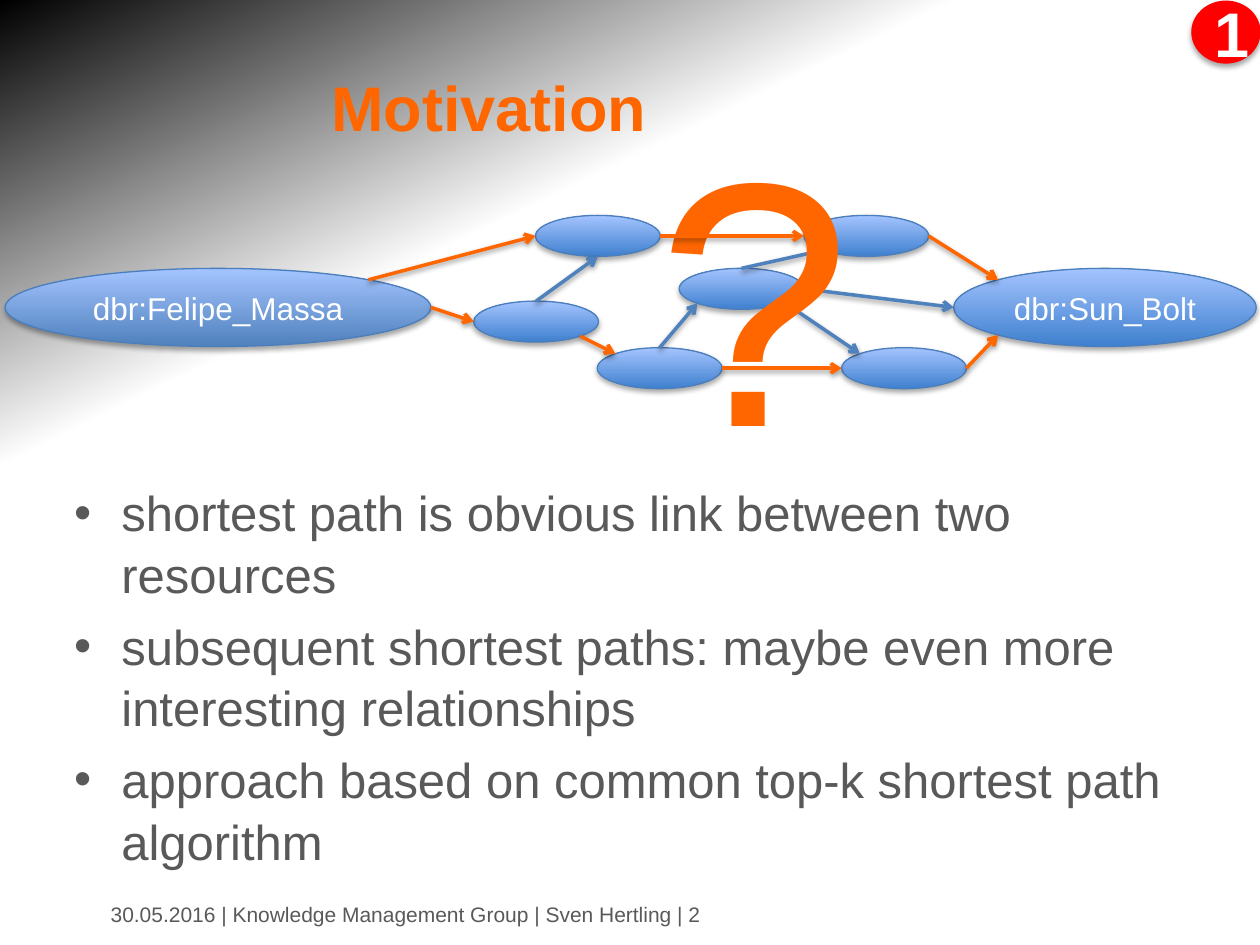
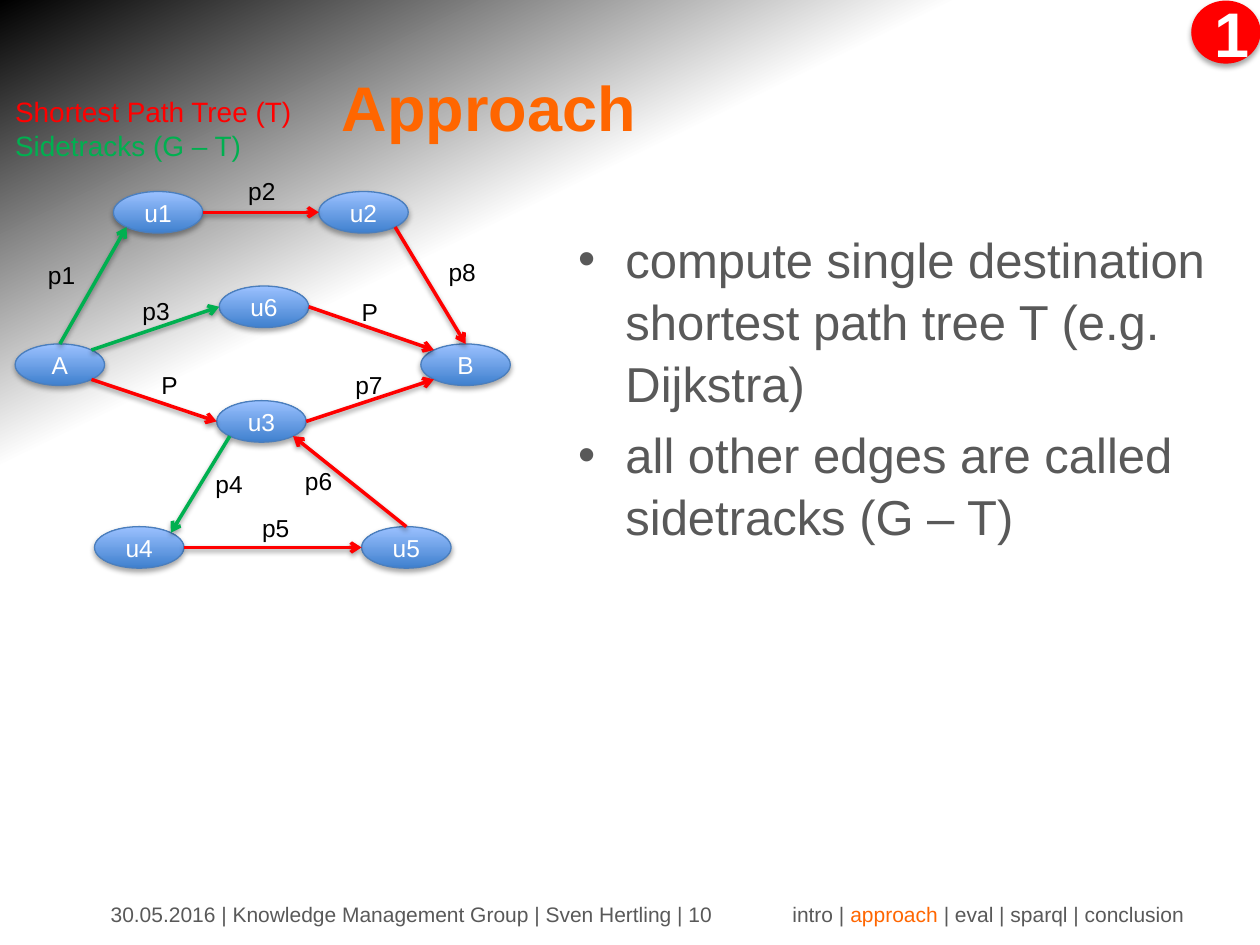
from math import cos, radians, sin

from lxml.etree import SubElement
from pptx import Presentation
from pptx.dml.color import RGBColor
from pptx.enum.shapes import MSO_CONNECTOR, MSO_SHAPE
from pptx.enum.text import MSO_ANCHOR, PP_ALIGN
from pptx.oxml.ns import qn
from pptx.util import Pt

# Colours
ORANGE = RGBColor(0xFF, 0x66, 0x00)
RED = RGBColor(0xFF, 0x00, 0x00)
GREEN = RGBColor(0x00, 0xB0, 0x50)
BLUE = RGBColor(0x4F, 0x81, 0xBD)
RIM = RGBColor(0x4B, 0x7E, 0xBC)
DEEP = RGBColor(0x3F, 0x80, 0xCE)
LIGHT = RGBColor(0xA4, 0xC4, 0xFF)
PALE = RGBColor(0x9B, 0xC1, 0xFF)
GREY = RGBColor(0x59, 0x59, 0x59)
BLACK = RGBColor(0x00, 0x00, 0x00)
WHITE = RGBColor(0xFF, 0xFF, 0xFF)

# Font formats
TITLE = dict(size=Pt(36), bold=True, rgb=ORANGE)
BADGE = dict(size=Pt(36), bold=True, rgb=WHITE)
BODY = dict(size=Pt(28), rgb=GREY)
FOOT = dict(size=Pt(12), rgb=GREY)
MARK = dict(size=Pt(199), rgb=ORANGE)
ENDS = dict(size=Pt(18), rgb=WHITE)
NODE = dict(size=Pt(14), rgb=WHITE)
LABEL = dict(size=Pt(14), rgb=BLACK)
KEY = dict(size=Pt(16), rgb=RED)

TIGHT = (10.08, 5.04, 10.08, 5.04)
SITES = ["n", "nw", "w", "sw", "s", "se", "e", "ne"]


def style(font, look):
    for key, val in {"name": "Arial", **look}.items():
        if key == "rgb":
            font.color.rgb = val
        else:
            setattr(font, key, val)


def write(frame, paras, look, align=PP_ALIGN.LEFT, **form):
    """Each paragraph is a list of (text, colour) runs; None keeps the colour."""
    for key, val in {"word_wrap": True, **form}.items():
        setattr(frame, key, val)
    for i, runs in enumerate(paras):
        para = frame.paragraphs[0] if i == 0 else frame.add_paragraph()
        para.alignment = align
        for text, rgb in runs:
            run = para.add_run()
            run.text = text
            style(run.font, {**look, "rgb": rgb or look["rgb"]})


def pad(frame, sides):
    for name, val in zip(("left", "top", "right", "bottom"), sides):
        setattr(frame, "margin_" + name, Pt(val))


def label(slide, box, paras, look, sides=(7.2, 3.6, 7.2, 3.6), **form):
    frame = slide.shapes.add_textbox(*map(Pt, box)).text_frame
    pad(frame, sides)
    write(frame, paras, look, **form)
    return frame


def grade(host, stops, angle):
    """Refill the gradient of host with (percent, colour, alpha) stops."""
    grad = next(host.iter(qn("a:gradFill")))
    for child in list(grad):
        grad.remove(child)
    rows = SubElement(grad, qn("a:gsLst"))
    for pos, rgb, alpha in stops:
        stop = SubElement(rows, qn("a:gs"), pos=str(pos * 1000))
        tone = SubElement(stop, qn("a:srgbClr"), val=str(rgb))
        if alpha < 100:
            SubElement(tone, qn("a:alpha"), val=str(alpha * 1000))
    SubElement(grad, qn("a:lin"), ang=str(angle * 60000), scaled="0")


def shade(part, alpha, dist):
    props = part.element.spPr
    glow = props.find(qn("a:effectLst"))
    if glow is None:
        glow = SubElement(props, qn("a:effectLst"))
    drop = SubElement(glow, qn("a:outerShdw"), blurRad=str(Pt(3.1)),
                      dist=str(Pt(dist)), dir="5400000", rotWithShape="0")
    tone = SubElement(drop, qn("a:srgbClr"), val=str(BLACK))
    SubElement(tone, qn("a:alpha"), val=str(alpha * 1000))


def oval(slide, box, rim, tones):
    part = slide.shapes.add_shape(MSO_SHAPE.OVAL, *map(Pt, box))
    if len(tones) == 1:
        part.fill.solid()
        part.fill.fore_color.rgb = tones[0]
    else:
        part.fill.gradient()
        low, high = tones
        grade(part.element, [(0, low, 100), (100, high, 100)], 270)
    part.line.color.rgb = rim
    part.line.width = Pt(0.75)
    part.shadow.inherit = False
    shade(part, 35, 1.8)
    return part


def site(part, side):
    """Point of an ellipse at one of its eight connection sites."""
    turn = radians(90 + 45 * SITES.index(side))
    x = part.left + part.width / 2 * (1 + cos(turn))
    y = part.top + part.height / 2 * (1 - sin(turn))
    return round(x), round(y)


def arrow(slide, nodes, edge, rgb):
    start, out, end, into = edge.split()
    ends = [("a:stCxn", nodes[start], out), ("a:endCxn", nodes[end], into)]
    points = [site(part, side) for _, part, side in ends]
    wire = slide.shapes.add_connector(
        MSO_CONNECTOR.STRAIGHT, *points[0], *points[1])
    wire.line.color.rgb = rgb
    wire.line.width = Pt(2)
    line = wire.element.spPr.find(qn("a:ln"))
    SubElement(line, qn("a:tailEnd"), type="arrow")
    shade(wire, 38, 1.6)
    # Glue both ends to their ellipses
    glue = next(wire.element.iter(qn("p:cNvCxnSpPr")))
    for tag, part, side in ends:
        SubElement(glue, qn(tag), id=str(part.shape_id),
                   idx=str(SITES.index(side)))


def frame_up(deck, title, page):
    """Slide with the shared badge, title and footer."""
    slide = deck.slides.add_slide(deck.slide_layouts[6])
    badge = oval(slide, (681.12, 0.72, 38.88, 35.28), RED, [RED])
    write(badge.text_frame, [[("1", None)]], BADGE, PP_ALIGN.CENTER,
          vertical_anchor=MSO_ANCHOR.MIDDLE)
    label(slide, (36, 23.76, 485.28, 74.16), [[(title, None)]], TITLE,
          (8.64, 3.6, 7.2, 3.6), align=PP_ALIGN.CENTER,
          vertical_anchor=MSO_ANCHOR.MIDDLE)
    foot = f"30.05.2016 | Knowledge Management Group | Sven Hertling | {page}"
    label(slide, (56.16, 510.48, 393.12, 23.76), [[(foot, None)]], FOOT,
          vertical_anchor=MSO_ANCHOR.MIDDLE)
    return slide


def bullets(slide, box, lines):
    frame = label(slide, box, [[(line, None)] for line in lines], BODY)
    for i, para in enumerate(frame.paragraphs):
        props = para._p.get_or_add_pPr()
        props.set("marL", str(Pt(27)))
        props.set("indent", str(Pt(-27)))
        para.line_spacing = 1.05
        if i:
            para.space_before = Pt(5.6)
        SubElement(props, qn("a:buFont"), typeface="Arial")
        SubElement(props, qn("a:buChar"), char="•")


def link_graph(slide, box):
    left, top, wide, _ = box
    # Two named resources at the outer edges
    nodes = {}
    for name, text, x, width, low in [
            ("from", "dbr:Felipe_Massa", 0, 243.36, BLUE),
            ("to", "dbr:Sun_Bolt", wide - 172.8, 172.8, DEEP)]:
        node = oval(slide, (left + x, top + 30.24, width, 44.64), RIM,
                    [low, LIGHT])
        write(node.text_frame, [[(text, None)]], ENDS, PP_ALIGN.CENTER,
              word_wrap=False, vertical_anchor=MSO_ANCHOR.MIDDLE)
        nodes[name] = node
    # Unnamed steps between them
    for name, x, y in [("a", 303.12, 0), ("b", 338.4, 75.6),
                       ("c", 385.2, 30.24), ("d", 456.48, 0),
                       ("e", 267.84, 48.96), ("f", 478.08, 75.6)]:
        nodes[name] = oval(slide, (left + x, top + y, 71.28, 23.4), RIM,
                           [DEEP, LIGHT])
    for edge in ["b n c sw", "e n a s", "c n d sw", "c e to w", "c se f nw"]:
        arrow(slide, nodes, edge, BLUE)
    # Question mark lies under the orange paths
    label(slide, (left + 365.76, top - 82.08, 43.92, 248.4), [[("?", None)]],
          MARK)
    for edge in ["from ne a w", "a e d w", "d e to nw", "from e e w",
                 "e se b nw", "b e f w", "f e to sw"]:
        arrow(slide, nodes, edge, ORANGE)


def tree_graph(slide, box):
    left, top, *_ = box
    nodes = {}
    for name, x, y in [("A", 0, 87.12), ("u6", 116.64, 54),
                       ("u3", 115.2, 119.52), ("u1", 56.16, 0),
                       ("u2", 173.52, 0), ("B", 231.84, 87.12),
                       ("u4", 45.36, 191.52), ("u5", 198, 191.52)]:
        node = oval(slide, (left + x, top + y, 51.12, 23.76), RIM,
                    [DEEP, PALE])
        pad(node.text_frame, TIGHT)
        write(node.text_frame, [[(name, None)]], NODE, PP_ALIGN.CENTER,
              word_wrap=False, vertical_anchor=MSO_ANCHOR.MIDDLE)
        nodes[name] = node
    # Edge labels
    for text, x, y, width in [
            ("p1", 8.64, 33.84, 42.48), ("p2", 123.12, -13.68, 49.68),
            ("p3", 62.64, 54.72, 44.64), ("P", 73.44, 97.2, 33.84),
            ("p5", 131.04, 178.56, 46.08), ("p6", 155.52, 151.92, 43.92),
            ("p7", 184.32, 97.2, 47.52), ("p8", 237.6, 32.4, 45.36),
            ("P", 187.92, 55.44, 33.84), ("p4", 104.4, 153.36, 41.76)]:
        label(slide, (left + x, top + y, width, 27.36), [[(text, None)]],
              LABEL, TIGHT)
    # Tree edges are red, sidetracks green
    for rgb, edges in [
            (RED, ["u2 se B n", "u6 e B nw", "u3 e B sw", "A se u3 w",
                   "u1 e u2 w", "u5 n u3 se", "u4 e u5 w"]),
            (GREEN, ["A ne u6 w", "A n u1 sw", "u3 sw u4 ne"])]:
        for edge in edges:
            arrow(slide, nodes, edge, rgb)
    # Colour key
    label(slide, (left - 10.08, top - 60.48, 180.72, 48.96),
          [[("Shortest Path Tree (T)", None)], [("Sidetracks (G – T)", GREEN)]],
          KEY, TIGHT)


def main():
    deck = Presentation()
    deck.slide_width, deck.slide_height = Pt(720), Pt(540)
    master = deck.slide_master
    master.background.fill.gradient()
    grade(master.element,
          [(0, WHITE, 100), (70, WHITE, 100), (100, BLACK, 41)], 244)

    # Motivation
    slide = frame_up(deck, "Motivation", 2)
    link_graph(slide, (2.88, 123.12, 714.96, 99))
    bullets(slide, (35.28, 270.72, 648, 264.96), [
        "shortest path is obvious link between two resources",
        "subsequent shortest paths: maybe even more interesting relationships",
        "approach based on common top-k shortest path algorithm"])

    # Approach
    slide = frame_up(deck, "Approach", 10)
    tree_graph(slide, (8.64, 109.44, 282.96, 215.28))
    bullets(slide, (323.28, 126, 396.72, 183.6), [
        "compute single destination shortest path tree T (e.g. Dijkstra)",
        "all other edges are called sidetracks (G – T)"])
    label(slide, (445.68, 510.48, 243.36, 23.76),
          [[("intro | ", None), ("approach ", ORANGE),
            ("| eval | sparql | conclusion", None)]], FOOT,
          vertical_anchor=MSO_ANCHOR.MIDDLE)

    deck.save("out.pptx")


if __name__ == "__main__":
    main()
